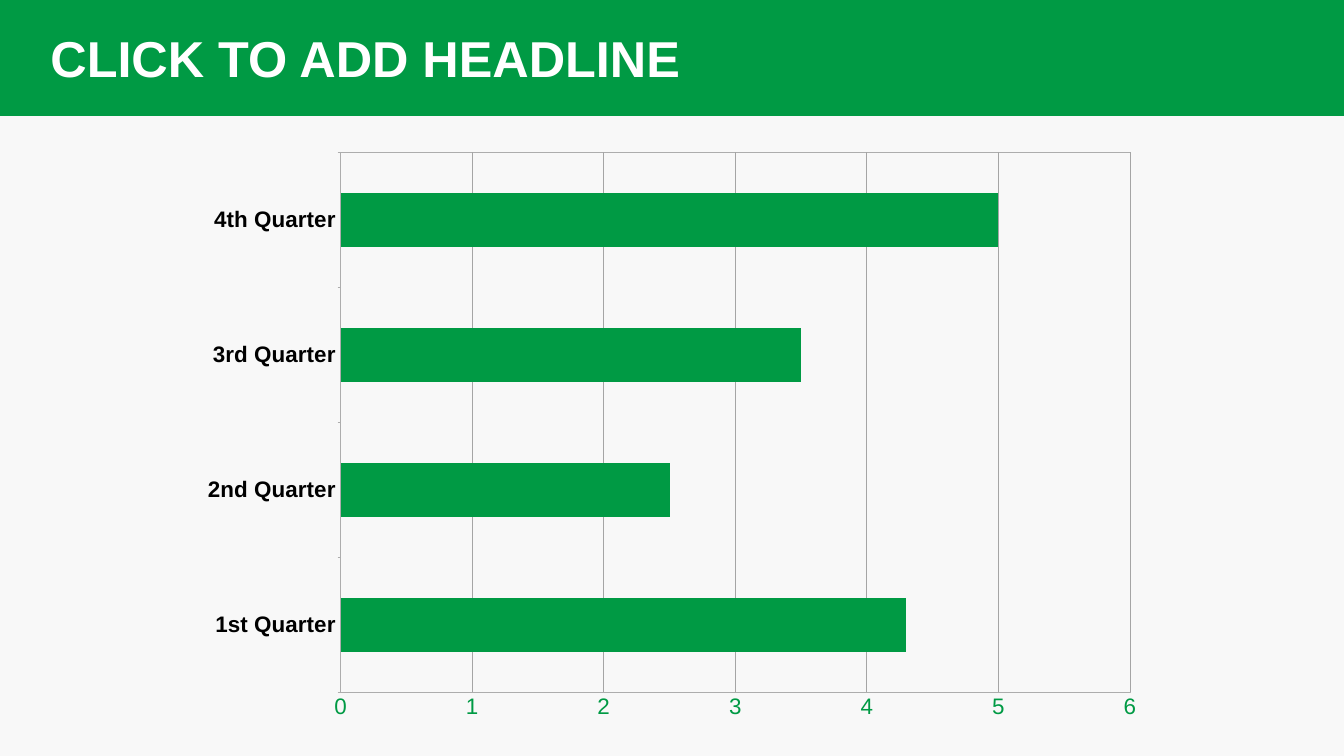
import pptx
import pptx.chart.data
import pptx.dml.color
import pptx.enum.chart
import pptx.enum.shapes
import pptx.enum.text
import pptx.oxml
import pptx.oxml.ns
import pptx.util
from pptx.util import Inches

GREEN = "009A44"
WHITE = "FFFFFF"
BLACK = "000000"
BACKGROUND = "F8F8F8"
AXIS_GREY = "ADADAD"
GRID_GREY = "A5A5A5"
SLIDE_WIDTH = 26.67
CHART_WIDTH, CHART_HEIGHT = 19.19, 11.73

QUARTERS = ["1st Quarter", "2nd Quarter", "3rd Quarter", "4th Quarter"]
VALUES = [4.3, 2.5, 3.5, 5]


def color(hex_string):
    return pptx.dml.color.RGBColor.from_string(hex_string)


def fill_solid(fill, hex_string):
    fill.solid()
    fill.fore_color.rgb = color(hex_string)


def format_font(font, size, hex_string, bold=False, name="Arial"):
    font.name = name
    font.size = pptx.util.Pt(size)
    font.bold = bold
    font.color.rgb = color(hex_string)


def format_line(line, hex_string, width):
    line.color.rgb = color(hex_string)
    line.width = pptx.util.Pt(width)


def add_headline(slide, text):
    title = slide.shapes.title
    title.left, title.top = Inches(1), Inches(0.61)
    title.width, title.height = Inches(21), Inches(1.19)
    frame = title.text_frame
    frame.text = text
    frame.word_wrap = True
    frame.auto_size = pptx.enum.text.MSO_AUTO_SIZE.NONE
    frame.vertical_anchor = pptx.enum.text.MSO_ANCHOR.BOTTOM
    frame.margin_left = 0
    frame.margin_right = Inches(0.1)
    frame.margin_top = frame.margin_bottom = Inches(0.05)
    paragraph = frame.paragraphs[0]
    paragraph.alignment = pptx.enum.text.PP_ALIGN.LEFT
    paragraph.line_spacing = 0.9
    format_font(paragraph.runs[0].font, 72, WHITE, bold=True)


def add_header_band(slide):
    """Add the full-width band behind the headline."""
    band = slide.shapes.add_shape(
        pptx.enum.shapes.MSO_SHAPE.RECTANGLE, 0, 0, Inches(SLIDE_WIDTH), Inches(2.3))
    band.shadow.inherit = False
    fill_solid(band.fill, GREEN)
    band.line.fill.background()
    slide.shapes.title._element.addprevious(band._element)


def frame_plot_area(chart, left, top, width, height):
    """Place the inner plot area, in inches within the chart, and outline it."""
    namespaces = pptx.oxml.ns.nsdecls("c", "a")
    plot_area = chart._chartSpace.chart.plotArea
    for layout in plot_area.findall(pptx.oxml.ns.qn("c:layout")):
        plot_area.remove(layout)
    fractions = {"x": left / CHART_WIDTH, "y": top / CHART_HEIGHT,
                 "w": width / CHART_WIDTH, "h": height / CHART_HEIGHT}
    places = "".join(
        f'<c:{tag} val="{value:.4f}"/>' for tag, value in fractions.items())
    plot_area.insert(0, pptx.oxml.parse_xml(
        f'<c:layout {namespaces}><c:manualLayout><c:layoutTarget val="inner"/>'
        f'<c:xMode val="edge"/><c:yMode val="edge"/>{places}'
        '</c:manualLayout></c:layout>'))
    plot_area.append(pptx.oxml.parse_xml(
        f'<c:spPr {namespaces}><a:noFill/><a:ln w="9525"><a:solidFill>'
        f'<a:srgbClr val="{AXIS_GREY}"/></a:solidFill></a:ln></c:spPr>'))


def add_quarter_chart(slide):
    data = pptx.chart.data.CategoryChartData()
    data.categories = QUARTERS
    data.add_series("Series 1", VALUES)
    chart = slide.shapes.add_chart(
        pptx.enum.chart.XL_CHART_TYPE.BAR_CLUSTERED, Inches(3.74), Inches(2.79),
        Inches(CHART_WIDTH), Inches(CHART_HEIGHT), data).chart
    chart.has_title = False
    chart.has_legend = False
    format_font(chart.font, 10, BLACK, name="Calibri")

    plot = chart.plots[0]
    plot.gap_width = 150
    plot.vary_by_categories = False
    fill_solid(plot.series[0].format.fill, GREEN)

    tick_marks = pptx.enum.chart.XL_TICK_MARK
    category_axis = chart.category_axis
    category_axis.major_tick_mark = tick_marks.OUTSIDE
    format_font(category_axis.tick_labels.font, 32, BLACK, bold=True)
    format_line(category_axis.format.line, AXIS_GREY, 0.75)

    value_axis = chart.value_axis
    value_axis.minimum_scale, value_axis.maximum_scale = 0, 6
    value_axis.major_unit = 1
    value_axis.major_tick_mark = tick_marks.NONE
    format_font(value_axis.tick_labels.font, 32, GREEN)
    value_axis.format.line.fill.background()
    value_axis.has_major_gridlines = True
    format_line(value_axis.major_gridlines.format.line, GRID_GREY, 1)

    frame_plot_area(chart, 3.02, 0.23, 15.66, 10.72)


def main():
    presentation = pptx.Presentation()
    presentation.slide_width = Inches(SLIDE_WIDTH)
    presentation.slide_height = Inches(15)
    slide = presentation.slides.add_slide(presentation.slide_layouts[5])
    fill_solid(slide.background.fill, BACKGROUND)
    add_headline(slide, "CLICK TO ADD HEADLINE")
    add_header_band(slide)
    add_quarter_chart(slide)
    presentation.save("out.pptx")


if __name__ == "__main__":
    main()
